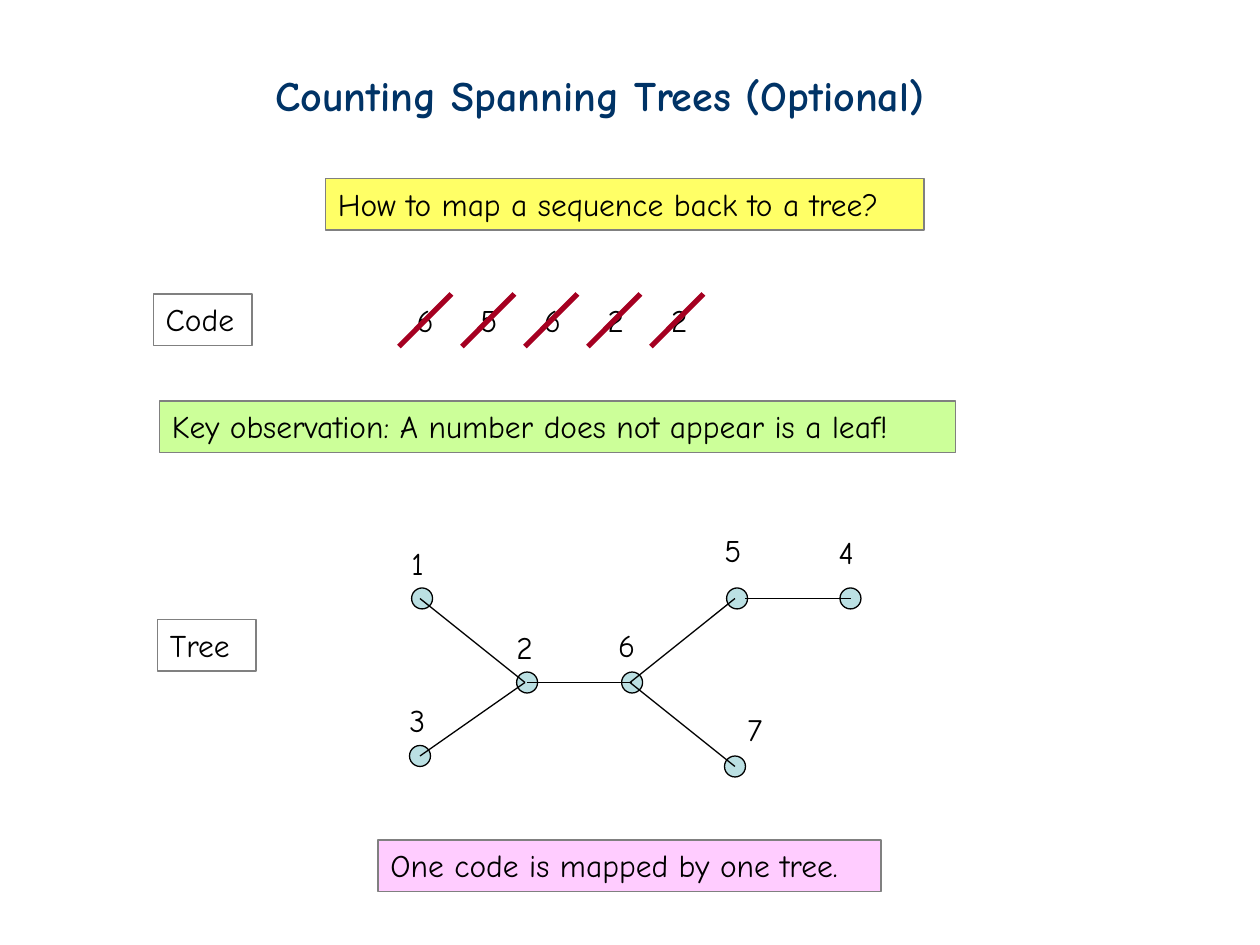
from lxml.etree import SubElement
from pptx import Presentation
from pptx.dml.color import RGBColor
from pptx.enum.shapes import MSO_CONNECTOR as Link, MSO_SHAPE as Form
from pptx.enum.text import MSO_ANCHOR as Anchor, MSO_AUTO_SIZE as Fit, PP_ALIGN as Align
from pptx.oxml.ns import qn
from pptx.util import Inches, Pt

COLS, ROWS = 120, 90
WIDTH, HEIGHT = Inches(10), Inches(7.5)
FONT = "Comic Neue"
BOXES = [
    ("How to map a sequence back to a tree?", 31, 17, 57, "FFFF66"),
    ("Code", 14.6, 28, 9.4, None),
    ("Key observation: A number does not appear is a leaf!", 15.2, 38.2, 75.8, "CCFF99"),
    ("Tree", 15, 59, 9.4, None),
    ("One code is mapped by one tree.", 36, 80, 47.9, "FFCCFF"),
]
NODES = {
    "1": ((39.2, 56), (38, 51.2)),
    "2": ((49.2, 64), (48, 59.2)),
    "3": ((39, 71), (37.8, 66.2)),
    "4": ((80, 56), (78.7, 50.2)),
    "5": ((69.2, 56), (67.8, 50)),
    "6": ((59.2, 64), (57.7, 59)),
    "7": ((69, 72), (70, 67)),
}
EDGES = [
    (50.2, 65, 60.2, 65), (71, 57, 81, 57), (70, 57, 60, 65),
    (40, 57, 50, 65), (40, 72, 50, 65), (60, 65, 70, 73),
]


def color(code):
    """Turn a hex string into a colour."""
    return RGBColor.from_string(code)


def grid(*spans):
    """Turn column and row pairs into lengths."""
    return [round(n * (HEIGHT / ROWS if i % 2 else WIDTH / COLS))
            for i, n in enumerate(spans)]


def assign(item, values):
    """Set every attribute named in a dict."""
    for name, value in values.items():
        setattr(item, name, value)


def write(shape, text, size=18, ink="000000", bold=False):
    """Put one line of left-aligned text in a shape."""
    frame = shape.text_frame
    frame.text = text
    assign(frame, {
        "word_wrap": True, "auto_size": Fit.NONE, "vertical_anchor": Anchor.TOP,
        "margin_left": Inches(0.1), "margin_right": Inches(0.1),
        "margin_top": Inches(0.05), "margin_bottom": Inches(0.05),
    })
    line = frame.paragraphs[0]
    assign(line, {"alignment": Align.LEFT, "line_spacing": 1.0, "space_before": Pt(0)})
    font = line.runs[0].font
    assign(font, {"name": FONT, "size": Pt(size), "bold": bold})
    font.color.rgb = color(ink)


def add_form(slide, form, spot, fill, edge):
    """Add a thinly outlined preset shape."""
    shape = slide.shapes.add_shape(form, *grid(*spot))
    shape.shadow.inherit = False
    if fill:
        shape.fill.solid()
        shape.fill.fore_color.rgb = color(fill)
    else:
        shape.fill.background()
    shape.line.color.rgb = color(edge)
    shape.line.width = Pt(0.75)
    return shape


def add_digit(slide, text, col, row):
    """Add a single digit as a text box."""
    write(slide.shapes.add_textbox(*grid(col, row, 4.2, 4.8)), text)


def add_line(slide, ends, ink="000000", width=0.75):
    """Add a straight line without a shadow."""
    line = slide.shapes.add_connector(Link.STRAIGHT, *grid(*ends))
    line.line.color.rgb = color(ink)
    line.line.width = Pt(width)
    SubElement(line._element.spPr, qn("a:effectLst"))


def add_title(slide, text):
    """Place and fill the title."""
    title = slide.shapes.title
    assign(title, dict(zip(("left", "top", "width", "height"), grid(25, 6, 70.2, 6))))
    write(title, text, 24, "003366", True)


def add_code(slide, digits):
    """Add the row of crossed-out digits."""
    for i, digit in enumerate(digits):
        add_digit(slide, digit, 38.5 + 6.06 * i, 28.1)
        add_line(slide, (38 + 6 * i, 33, 43 + 6 * i, 28), "A50021", 3)


def add_tree(slide):
    """Add the nodes with their numbers, then the edges."""
    for name, (spot, label) in NODES.items():
        add_form(slide, Form.OVAL, (*spot, 2, 2), "BBE0E3", "000000")
        add_digit(slide, name, *label)
    for ends in EDGES:
        add_line(slide, ends)


def main():
    """Build and save the slide."""
    deck = Presentation()
    assign(deck, {"slide_width": WIDTH, "slide_height": HEIGHT})
    slide = deck.slides.add_slide(deck.slide_layouts[5])
    add_title(slide, "Counting Spanning Trees (Optional)")
    for text, col, row, width, fill in BOXES:
        box = add_form(slide, Form.RECTANGLE, (col, row, width, 4.9), fill, "808080")
        write(box, text)
    add_code(slide, "65622")
    add_tree(slide)
    deck.save("out.pptx")


if __name__ == "__main__":
    main()
